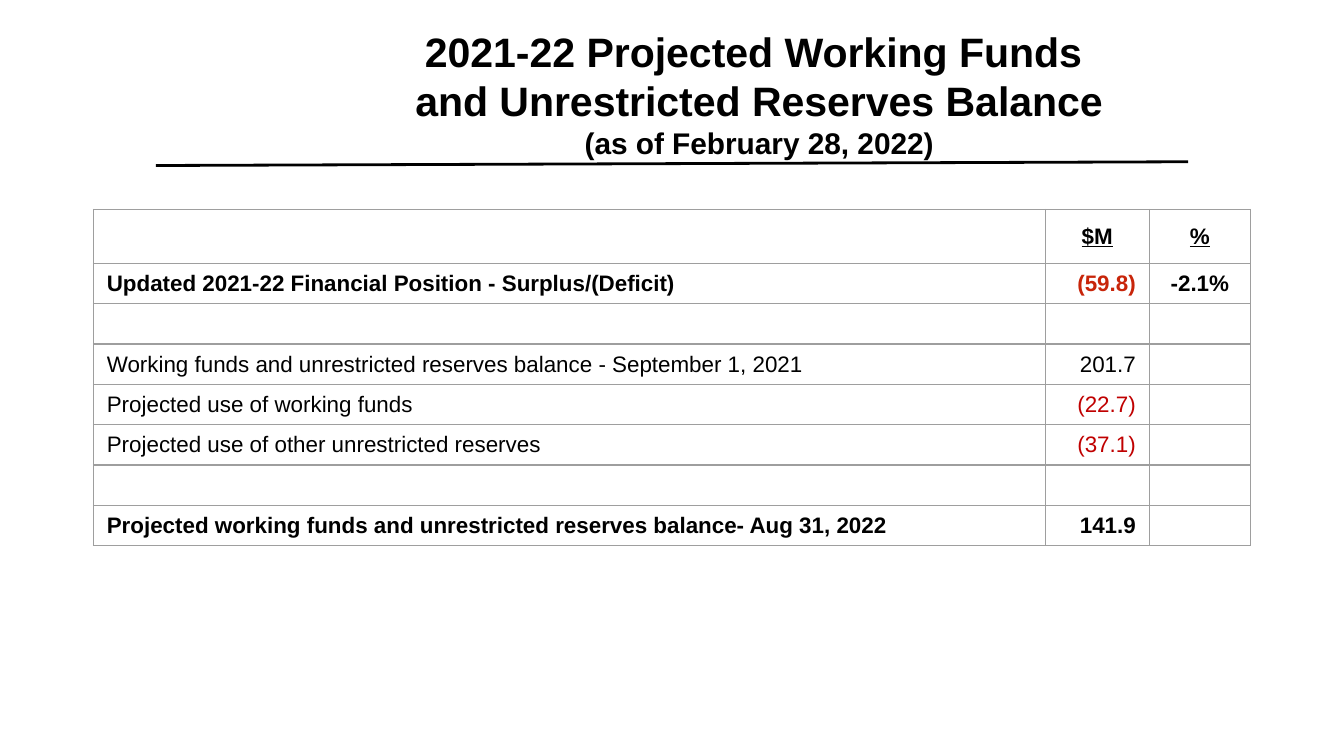
from dataclasses import dataclass

from lxml import etree
from pptx import Presentation
from pptx import util as u
from pptx.dml.color import RGBColor
from pptx.enum import shapes, text
from pptx.oxml.ns import qn

SLIDE_W = u.Inches(10)
SLIDE_H = SLIDE_W * 9 // 16
LEFT, CENTER, RIGHT = text.PP_ALIGN.LEFT, text.PP_ALIGN.CENTER, text.PP_ALIGN.RIGHT


@dataclass(frozen=True)
class Theme:
    font: str = "Arial"
    ink: str = "000000"
    deficit: str = "C8250A"
    use: str = "C00000"
    grid: str = "9E9E9E"
    title: float = 22
    subtitle: float = 16
    body: float = 12
    rule: float = 1.5
    border: float = 0.75


THEME = Theme()

# Each row: label, amount, percent, bold, amount colour
ROWS = [
    ("Updated 2021-22 Financial Position - Surplus/(Deficit)",
     "(59.8)", "-2.1%", True, THEME.deficit),
    ("", "", "", False, THEME.ink),
    ("Working funds and unrestricted reserves balance - September 1, 2021",
     "201.7", "", False, THEME.ink),
    ("Projected use of working funds", "(22.7)", "", False, THEME.use),
    ("Projected use of other unrestricted reserves", "(37.1)", "", False, THEME.use),
    ("", "", "", False, THEME.ink),
    ("Projected working funds and unrestricted reserves balance- Aug 31, 2022",
     "141.9", "", True, THEME.ink),
]


def region(left, top, width, height):
    """Turn percentages of the slide into a box in slide units."""
    return (int(SLIDE_W * left / 100), int(SLIDE_H * top / 100),
            int(SLIDE_W * width / 100), int(SLIDE_H * height / 100))


def add_span(para, words, size, color=THEME.ink, bold=False, underline=False):
    span = para.add_run()
    span.text = words
    font = span.font
    font.name, font.size = THEME.font, u.Pt(size)
    font.bold, font.underline = bold, underline
    font.color.rgb = RGBColor.from_string(color)


def add_title(page, box):
    frame = page.shapes.add_textbox(*box).text_frame
    frame.word_wrap = True
    frame.vertical_anchor = text.MSO_ANCHOR.MIDDLE
    frame.margin_left = frame.margin_right = u.Inches(0.1)
    frame.margin_top = frame.margin_bottom = u.Inches(0.1)
    lines = [
        ("2021-22 Projected Working Funds ", THEME.title),
        ("and Unrestricted Reserves Balance", THEME.title),
        ("(as of February 28, 2022)", THEME.subtitle),
    ]
    for index, (words, size) in enumerate(lines):
        para = frame.add_paragraph() if index else frame.paragraphs[0]
        para.alignment = CENTER
        add_span(para, words, size, bold=True)


def add_rule(page, box):
    """Draw a line rising from the lower left to the upper right of the box."""
    left, top, width, height = box
    rule = page.shapes.add_connector(
        shapes.MSO_CONNECTOR.STRAIGHT, left, top + height, left + width, top)
    rule.line.color.rgb = RGBColor.from_string(THEME.ink)
    rule.line.width = u.Pt(THEME.rule)
    etree.SubElement(rule._element.spPr, qn("a:effectLst"))


def add_borders(cell):
    props = cell._tc.get_or_add_tcPr()
    for index, side in enumerate(("a:lnL", "a:lnR", "a:lnT", "a:lnB")):
        line = etree.Element(qn(side), w=str(u.Pt(THEME.border)))
        fill = etree.SubElement(line, qn("a:solidFill"))
        etree.SubElement(fill, qn("a:srgbClr"), val=THEME.grid)
        props.insert(index, line)


def fill_cell(cell, words, align, pad, **style):
    cell.fill.background()
    add_borders(cell)
    cell.vertical_anchor = text.MSO_ANCHOR.MIDDLE
    cell.margin_left = cell.margin_right = u.Inches(0.1)
    cell.margin_top = cell.margin_bottom = u.Inches(pad)
    para = cell.text_frame.paragraphs[0]
    para.alignment = align
    if words:
        add_span(para, words, THEME.body, **style)
    else:  # keeps an empty row as low as a written one
        etree.SubElement(para._p, qn("a:endParaRPr"), sz=str(int(THEME.body * 100)))


def add_funds_table(page, box):
    table = page.shapes.add_table(len(ROWS) + 1, 3, *box).table
    table.first_row = table.horz_banding = False

    # Column widths and row heights share out the box
    width, height = box[2:]
    for column, share in zip(table.columns, (82.25, 9, 8.75)):
        column.width = int(width * share / 100)
    header_height = int(height * 0.16)
    for index, row in enumerate(table.rows):
        row.height = (height - header_height) // len(ROWS) if index else header_height

    # Header
    for column, words in enumerate(("", "$M", "%")):
        fill_cell(table.cell(0, column), words, CENTER, 0.1, bold=True, underline=True)

    # Body
    for index, (label, amount, percent, bold, color) in enumerate(ROWS, 1):
        fill_cell(table.cell(index, 0), label, LEFT, 0.05, bold=bold)
        fill_cell(table.cell(index, 1), amount, RIGHT, 0.05, bold=bold, color=color)
        fill_cell(table.cell(index, 2), percent, CENTER, 0.05, bold=bold)


def main():
    deck = Presentation()
    deck.slide_width, deck.slide_height = SLIDE_W, SLIDE_H
    page = deck.slides.add_slide(deck.slide_layouts[6])
    add_title(page, region(17.3, 3, 78.4, 18.8))
    add_funds_table(page, region(6.95, 27.7, 86.1, 42.8))
    add_rule(page, region(11.6, 21.4, 76.8, 0.5))
    deck.save("out.pptx")


if __name__ == "__main__":
    main()
